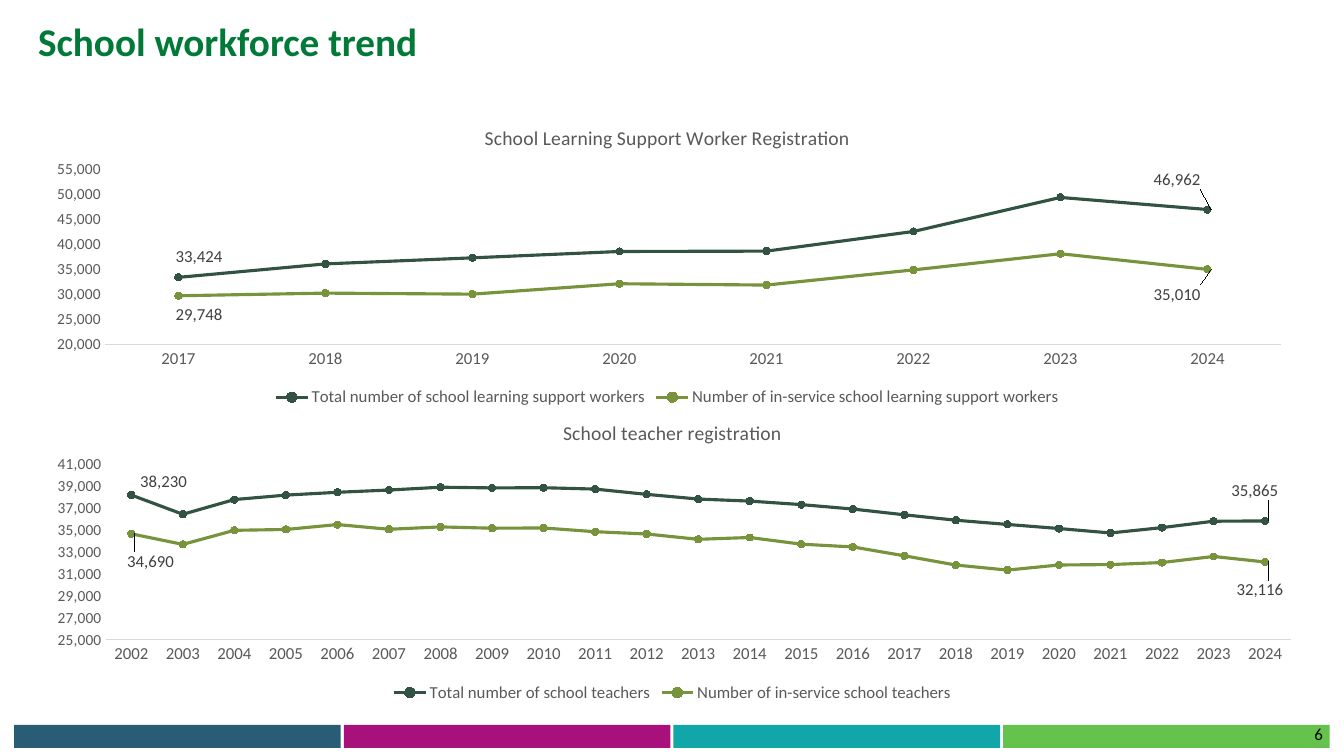
from lxml import etree
from pptx import Presentation
from pptx import util as u
from pptx.chart.data import CategoryChartData
from pptx.dml.color import RGBColor
from pptx.enum import chart as ch
from pptx.enum import shapes, text
from pptx.oxml import parse_xml
from pptx.oxml.ns import nsdecls, qn

GREEN = RGBColor(0x01, 0x7A, 0x37)
DARK = RGBColor(0x33, 0x53, 0x42)
OLIVE = RGBColor(0x77, 0x93, 0x3C)
GREY = RGBColor(0x59, 0x59, 0x59)
LABEL = RGBColor(0x40, 0x40, 0x40)
RULE = RGBColor(0xD9, 0xD9, 0xD9)
BLACK = RGBColor(0, 0, 0)
BARS = [RGBColor(0x29, 0x5D, 0x75), RGBColor(0xA8, 0x11, 0x7C),
        RGBColor(0x11, 0xA6, 0xA8), RGBColor(0x65, 0xC2, 0x4C)]

WORKERS = {
    "Total number of school learning support workers":
        [33424, 36103, 37325, 38594, 38668, 42585, 49380, 46962],
    "Number of in-service school learning support workers":
        [29748, 30275, 30071, 32145, 31887, 34914, 38139, 35010],
}
TEACHERS = {
    "Total number of school teachers":
        [38230, 36473, 37816, 38220, 38479, 38685, 38942, 38879, 38896, 38770, 38290, 37862,
         37673, 37355, 36951, 36426, 35929, 35545, 35171, 34766, 35256, 35837, 35865],
    "Number of in-service school teachers":
        [34690, 33723, 35010, 35086, 35533, 35102, 35320, 35200, 35224, 34882, 34672, 34189,
         34355, 33746, 33493, 32680, 31836, 31379, 31843, 31881, 32066, 32619, 32116],
}
LEADERS = (
    '<c:extLst %s><c:ext uri="{CE6537A1-D6FC-4f65-9D91-7224C49458BB}" '
    'xmlns:c15="http://schemas.microsoft.com/office/drawing/2012/chart">'
    '<c15:showLeaderLines val="1"/></c:ext></c:extLst>' % nsdecls("c"))


def layout(**values):
    el = etree.Element(qn("c:layout"))
    manual = etree.SubElement(el, qn("c:manualLayout"))
    for name, value in values.items():
        etree.SubElement(manual, qn("c:" + name)).set("val", str(value))
    return el


class Deck:
    font = "Calibri"

    def __init__(self):
        self.prs = Presentation()
        self.prs.slide_width = u.Inches(13.33)
        self.prs.slide_height = u.Inches(7.5)
        self.s = self.prs.slides.add_slide(self.prs.slide_layouts[6])

    def box(self, x, y, w, h):
        across, down = self.prs.slide_width / 100, self.prs.slide_height / 100
        return [int(v) for v in (x * across, y * down, w * across, h * down)]

    def style(self, font, size, color, bold=False):
        font.name, font.size, font.bold = self.font, u.Pt(size), bold
        font.color.rgb = color

    def bar(self, area, color):
        sp = self.s.shapes.add_shape(shapes.MSO_SHAPE.RECTANGLE, *self.box(*area))
        sp.shadow.inherit = False
        sp.fill.solid()
        sp.fill.fore_color.rgb = color
        sp.line.fill.background()

    def text(self, area, words, size, color, bold=False, align=text.PP_ALIGN.LEFT):
        tf = self.s.shapes.add_textbox(*self.box(*area)).text_frame
        tf.word_wrap = True
        p = tf.paragraphs[0]
        p.text = words
        p.alignment = align
        p.line_spacing = 0.9
        self.style(p.runs[0].font, size, color, bold)

    def chart(self, area, title, first_year, series, low, high, step, offsets):
        years = range(first_year, 2025)
        data = CategoryChartData(number_format="#,##0")
        data.categories = [str(year) for year in years]
        for name, values in series.items():
            data.add_series(name, values)
        chart = self.s.shapes.add_chart(
            ch.XL_CHART_TYPE.LINE_MARKERS, *self.box(*area), data).chart
        self.style(chart.font, 10, BLACK)
        chart.has_title = True
        p = chart.chart_title.text_frame.paragraphs[0]
        p.text = title
        self.style(p.runs[0].font, 14, GREY)
        chart.has_legend = True
        chart.legend.position = ch.XL_LEGEND_POSITION.BOTTOM
        chart.legend.include_in_layout = False
        self.style(chart.legend.font, 12, GREY)
        self.axes(chart, low, high, step)
        plot = chart.plots[0]
        plot.vary_by_categories = False
        for ser, color, pair in zip(plot.series, (DARK, OLIVE), offsets):
            self.line(ser, color)
            for index, offset in zip((0, len(years) - 1), pair):
                self.label(ser.points[index].data_label, offset)
            self.leaders(ser)
        area_xml = chart._chartSpace.chart.plotArea
        for old in area_xml.findall(qn("c:layout")):
            area_xml.remove(old)
        area_xml.insert(0, layout(layoutTarget="inner", xMode="edge", yMode="edge",
                                  x=0.06, y=0.2, w=0.92, h=0.58))

    def axes(self, chart, low, high, step):
        for axis, size in ((chart.category_axis, 12), (chart.value_axis, 11)):
            axis.has_major_gridlines = False
            axis.major_tick_mark = axis.minor_tick_mark = ch.XL_TICK_MARK.NONE
            self.style(axis.tick_labels.font, size, GREY)
        chart.category_axis.format.line.color.rgb = RULE
        chart.category_axis.format.line.width = u.Pt(0.75)
        axis = chart.value_axis
        axis.format.line.fill.background()
        axis.minimum_scale, axis.maximum_scale, axis.major_unit = low, high, step
        axis.tick_labels.number_format = "#,##0"
        axis.tick_labels.number_format_is_linked = False

    def line(self, ser, color):
        ser.smooth = False
        ser.format.line.color.rgb = color
        ser.format.line.width = u.Pt(2.25)
        ser.marker.style = ch.XL_MARKER_STYLE.CIRCLE
        ser.marker.size = 5
        ser.marker.format.fill.solid()
        ser.marker.format.fill.fore_color.rgb = color
        ser.marker.format.line.color.rgb = color

    def label(self, label, offset):
        self.style(label.font, 12, LABEL)
        label.position = ch.XL_LABEL_POSITION.RIGHT
        dx, dy = offset
        label._dLbl.find(qn("c:idx")).addnext(layout(x=dx / 100, y=dy / 100))

    def leaders(self, ser):
        ser.data_labels.show_value = False
        labels = ser._element.find(qn("c:dLbls"))
        for old in labels.findall(qn("c:showLeaderLines")):
            labels.remove(old)
        labels.append(parse_xml(LEADERS))


def main():
    d = Deck()
    for i, color in enumerate(BARS):
        d.bar((1.05 + 24.53 * i, 95.87, 24.3, 3.07), color)
    d.text((93.77, 95.33, 5.4, 4), "6", 12, BLACK, align=text.PP_ALIGN.RIGHT)
    d.text((2.1, 2.4, 43.44, 12), "School workforce trend", 28, GREEN, bold=True)
    d.chart((2.1, 53.47, 95.87, 40), "School teacher registration", 2002, TEACHERS,
            25000, 41000, 2000, [[(0.1, -4.3), (-3.2, -10)], [(-0.9, 9.3), (-2.8, 9.3)]])
    d.chart((2.1, 14.4, 95.12, 40), "School Learning Support Worker Registration", 2017, WORKERS,
            20000, 55000, 5000, [[(-0.8, -7), (-4.8, -10)], [(-0.8, 6.3), (-4.8, 8.3)]])
    d.prs.save("out.pptx")


if __name__ == "__main__":
    main()
